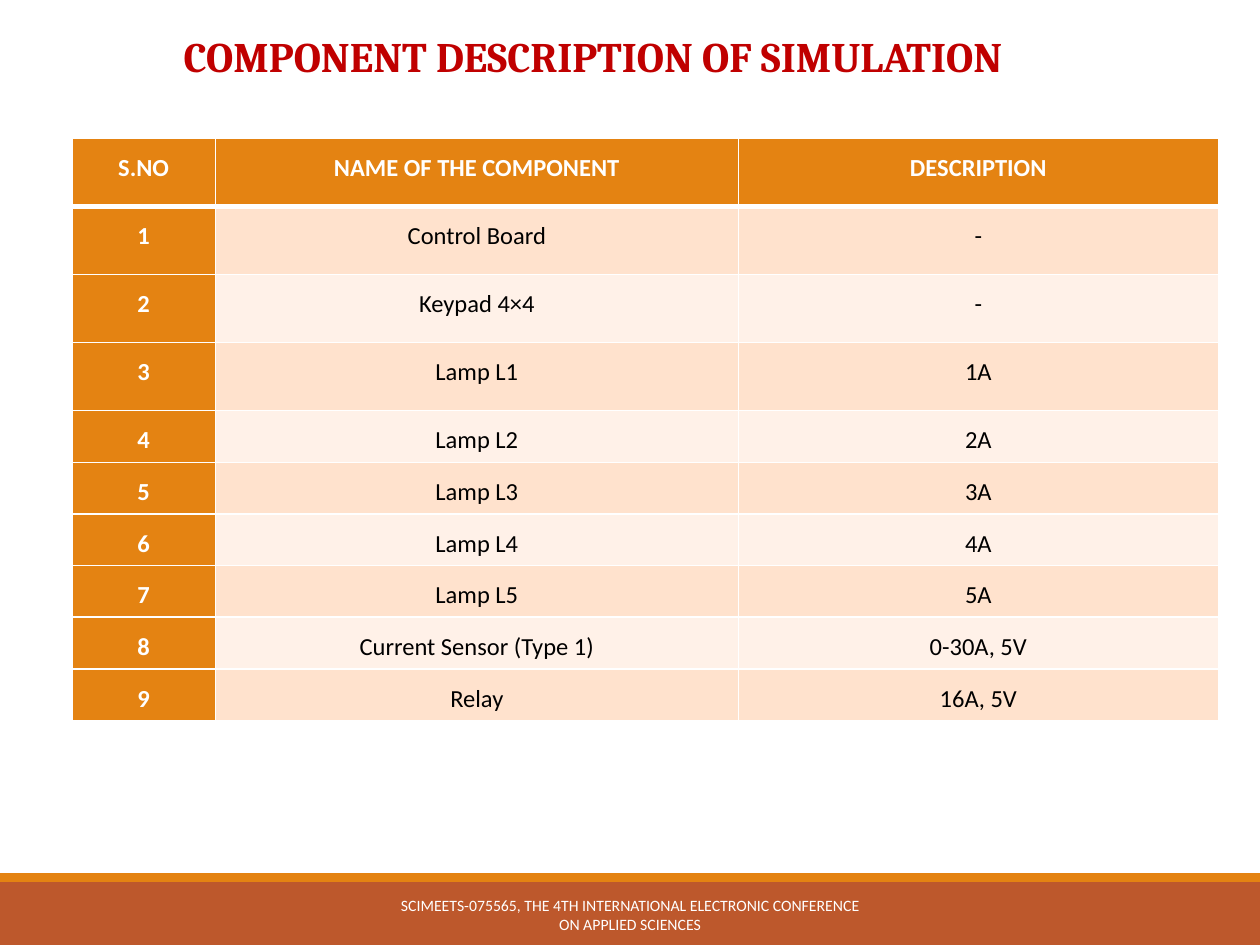
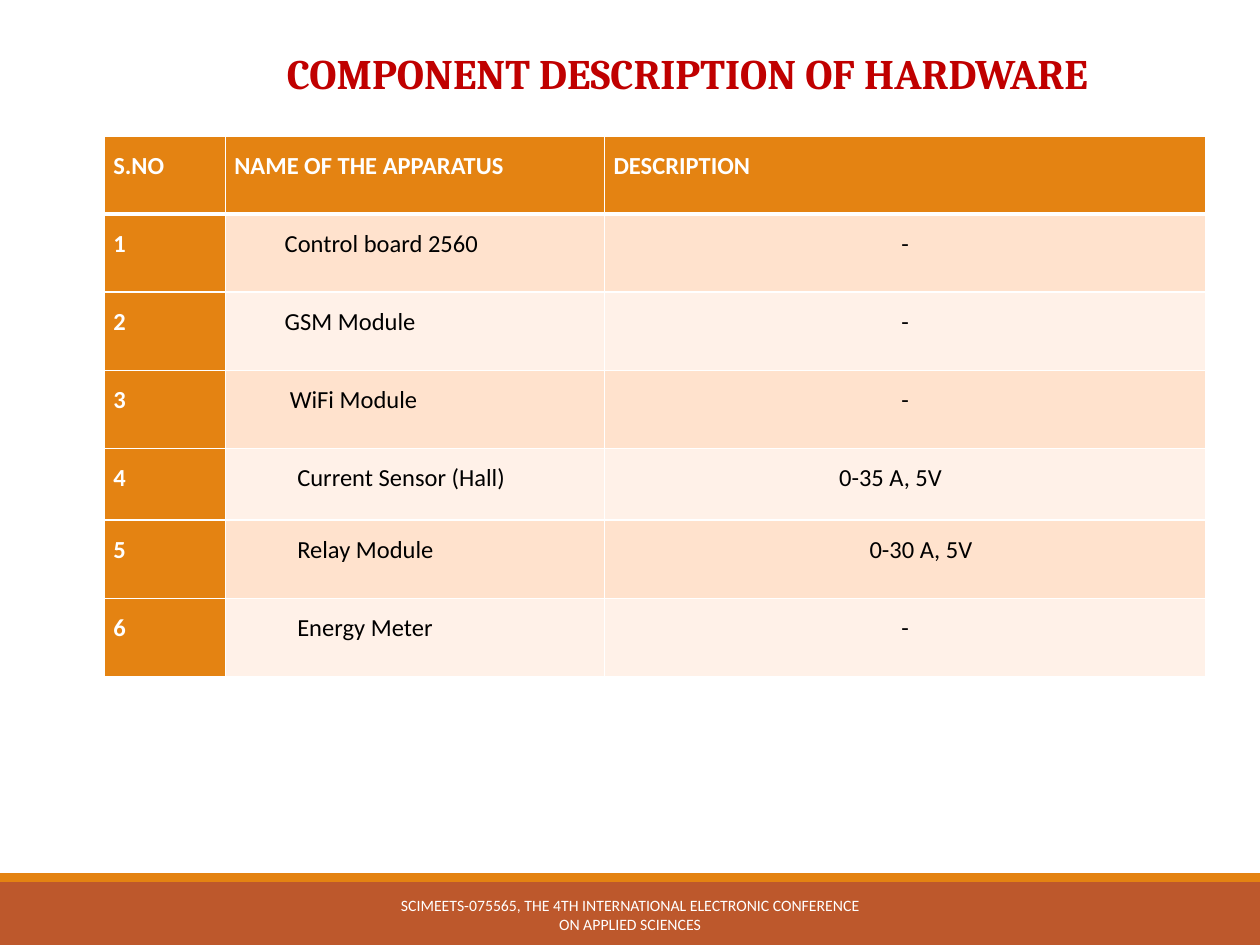
from lxml import etree
from pptx import Presentation
from pptx.dml.color import RGBColor
from pptx.enum import shapes, text
from pptx.oxml import ns
from pptx.util import Inches, Pt

# Shared colours and text
ORANGE, RUST, RED = "E48312", "BD582C", "C00000"
WHITE, BLACK = "FFFFFF", "000000"
BANDS = ["FFF1E8", "FFE2CD"]
FOOTER = ("SCIMEETS-075565, THE 4TH INTERNATIONAL ELECTRONIC "
          "CONFERENCE ON APPLIED SCIENCES")
LEFT, MID, JUST = text.PP_ALIGN.LEFT, text.PP_ALIGN.CENTER, text.PP_ALIGN.JUSTIFY
TOP, MIDDLE = text.MSO_ANCHOR.TOP, text.MSO_ANCHOR.MIDDLE
PAD = 0.07

# Table rows: a cell is its text, or (text, alignment, indent)
PARTS = [
    ("S.NO", "NAME OF THE COMPONENT", "DESCRIPTION"),
    ("1", "Control Board", "-"),
    ("2", "Keypad 4×4", "-"),
    *[(str(n + 2), f"Lamp L{n}", f"{n}A") for n in range(1, 6)],
    ("8", "Current Sensor (Type 1)", "0-30A, 5V"),
    ("9", "Relay", "16A, 5V"),
]
GEAR = [
    ("S.NO", ("NAME OF THE APPARATUS", JUST, 0), ("DESCRIPTION", JUST, 0)),
    ("1", ("Control board 2560", LEFT, 0.4), "-"),
    ("2", ("GSM Module", LEFT, 0.4), "-"),
    ("3", ("WiFi Module", LEFT, 0.44), "-"),
    ("4", ("Current Sensor (Hall)", LEFT, 0.5), ("0-35 A, 5V", LEFT, 1.79)),
    ("5", ("Relay Module", LEFT, 0.5), ("0-30 A, 5V", MID, 0.25)),
    ("6", ("Energy Meter", LEFT, 0.5), "-"),
]


def paint(item, tone):
    """Give a fill or a font one solid colour."""
    if hasattr(item, "solid"):
        item.solid()
        item = item.fore_color
    else:
        item = item.color
    item.rgb = RGBColor.from_string(tone)


def style(para, face, size, tone, bold=False, align=LEFT):
    para.alignment = align
    font = para.font
    font.name, font.size, font.bold = face, Pt(size), bold
    paint(font, tone)


def add_band(slide, top, high, tone):
    band = slide.shapes.add_shape(shapes.MSO_SHAPE.RECTANGLE, 0, Inches(top),
                                  Inches(10), Inches(high))
    band.shadow.inherit = False
    paint(band.fill, tone)
    band.line.fill.background()


def add_text(slide, words, place, anchor=MIDDLE, indent=0, **look):
    box = slide.shapes.add_textbox(*map(Inches, place))
    frame = box.text_frame
    frame.word_wrap = True
    frame.vertical_anchor = anchor
    frame.margin_left = Inches(0.1 + indent)
    frame.text = words
    style(frame.paragraphs[0], **look)


def add_title(slide, words, place, **more):
    add_text(slide, words, place, face="Cambria", size=24, tone=RED,
             bold=True, **more)


def add_edge(cell, side, width):
    """Draw one white border of a cell."""
    props = cell._tc.get_or_add_tcPr()
    line = etree.SubElement(props, ns.qn(f"a:ln{side}"), w=str(Pt(width)))
    fill = etree.SubElement(line, ns.qn("a:solidFill"))
    etree.SubElement(fill, ns.qn("a:srgbClr"), val=WHITE)


def fill_cell(cell, entry, row, col, align):
    words, align, indent = (entry, align, 0) if isinstance(entry, str) else entry
    head = row == 0 or col == 0
    for side in "LRTB":
        thick = (row, side) in [(0, "B"), (1, "T")]
        add_edge(cell, side, 3 if thick else 1)
    paint(cell.fill, ORANGE if head else BANDS[row % 2])
    cell.margin_left, cell.margin_right = Inches(PAD + indent), Inches(PAD)
    cell.margin_top = cell.margin_bottom = 0
    cell.text = words
    para = cell.text_frame.paragraphs[0]
    para.line_spacing = 1.5
    style(para, "Calibri", 14, WHITE if head else BLACK, head, align)


def add_grid(slide, rows, left, top, wides, highs, first=MID):
    """Add a table; first is the alignment of its first column."""
    grid = slide.shapes.add_table(
        len(rows), len(wides), Inches(left), Inches(top),
        Inches(sum(wides)), Inches(sum(highs))).table
    for col, wide in enumerate(wides):
        grid.columns[col].width = Inches(wide)
    for row, (cells, high) in enumerate(zip(rows, highs)):
        grid.rows[row].height = Inches(high)
        for col, entry in enumerate(cells):
            fill_cell(grid.cell(row, col), entry, row, col,
                      MID if col else first)


def add_page(deck):
    """Add a slide with the bands and the footer."""
    slide = deck.slides.add_slide(deck.slide_layouts[6])
    add_band(slide, 7, 0.5, RUST)
    add_band(slide, 6.93, 0.07, ORANGE)
    add_text(slide, FOOTER, (3.02, 7.06, 3.96, 0.4), face="Calibri", size=9,
             tone=WHITE, align=MID)
    return slide


def main():
    deck = Presentation()
    deck.slide_width, deck.slide_height = Inches(10), Inches(7.5)

    # Simulation parts
    page = add_page(deck)
    add_title(page, "COMPONENT DESCRIPTION OF SIMULATION",
              (1.36, 0.19, 8.06, 0.91), anchor=TOP)
    add_grid(page, PARTS, 0.57, 1.1, [1.14, 4.15, 3.81],
             [0.54] * 4 + [0.41] * 6)

    # Hardware parts
    page = add_page(deck)
    add_title(page, "COMPONENT DESCRIPTION OF HARDWARE",
              (1.02, 0.33, 8.37, 0.5), indent=0.5, align=MID)
    add_grid(page, GEAR, 0.83, 1.08, [0.96, 3.01, 4.77],
             [0.62] * 4 + [0.57] + [0.62] * 2, first=JUST)

    deck.save("out.pptx")


if __name__ == "__main__":
    main()
